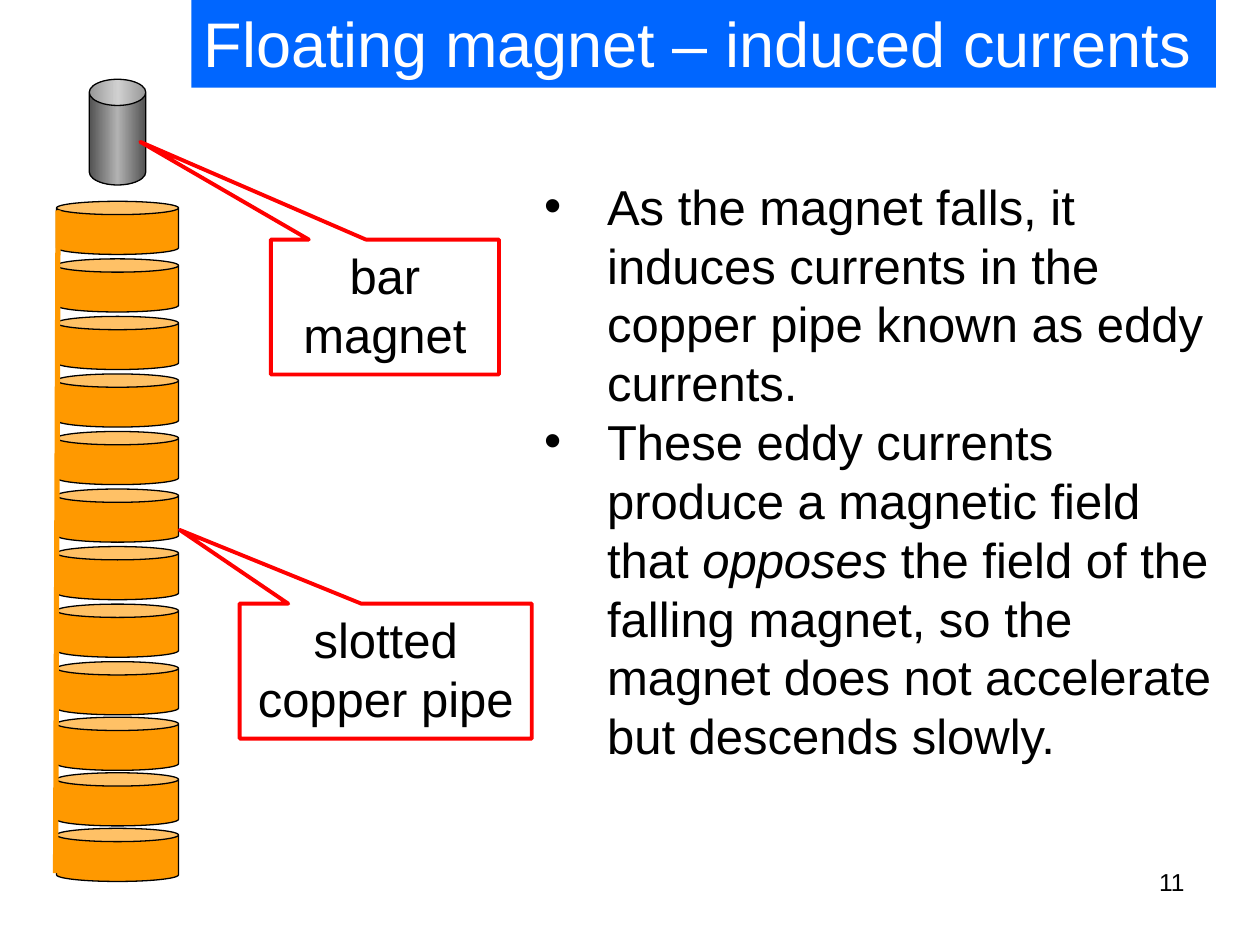
from dataclasses import dataclass

from lxml.etree import SubElement
from pptx import Presentation
from pptx.dml.color import RGBColor
from pptx.enum.shapes import MSO_CONNECTOR, MSO_SHAPE
from pptx.enum.text import MSO_ANCHOR, PP_ALIGN
from pptx.oxml.ns import qn
from pptx.util import Cm, Pt

BLACK, WHITE, RED = "000000", "FFFFFF", "FF0000"
COPPER, BLUE = "FF9900", "0066FF"
STEEL_STOPS = ((0, "525252"), (50, "B2B2B2"), (100, "525252"))
FRAME_FORMAT = {"word_wrap": True, "vertical_anchor": MSO_ANCHOR.TOP}

RING_COUNT = 12
WIDE_STEPS = 8  # the lowest rings stand slightly closer together
WIDE_PITCH, NARROW_PITCH = 1.16, 1.12


@dataclass(frozen=True)
class Box:
    """Left, top, width and height in centimetres."""
    left: float
    top: float
    width: float
    height: float

    def lengths(self) -> tuple:
        return Cm(self.left), Cm(self.top), Cm(self.width), Cm(self.height)


@dataclass(frozen=True)
class Callout:
    box: Box
    tip: tuple[float, float]
    lines: tuple[str, ...]


CALLOUTS = (
    Callout(Box(4.83, 12.17, 5.89, 2.72), (-0.705, -1.047), ("slotted copper pipe",)),
    Callout(Box(5.46, 4.83, 4.6, 2.72), (-1.072, -1.224), ("bar", "magnet")),
)
# Each point is a list of (text, italic) pieces.
POINTS = (
    (("As the magnet falls, it induces currents in the copper pipe "
      "known as eddy currents.", False),),
    (("These eddy currents produce a magnetic field that ", False),
     ("opposes", True),
     (" the field of the falling magnet, so the magnet does not "
      "accelerate but descends slowly.", False)),
)


def colour(code: str) -> RGBColor:
    return RGBColor.from_string(code)


def add_solid(slide, kind, box: Box, fill=None, line=None, weight=0.75, adjust=()):
    solid = slide.shapes.add_shape(kind, *box.lengths())
    solid.shadow.inherit = False
    if fill:
        solid.fill.solid()
        solid.fill.fore_color.rgb = colour(fill)
    else:
        solid.fill.background()
    if line:
        solid.line.color.rgb = colour(line)
        solid.line.width = Pt(weight)
    else:
        solid.line.fill.background()
    for index, value in enumerate(adjust):
        solid.adjustments[index] = value
    return solid


def write(holder, paragraphs, size: float, text_colour=BLACK, align=PP_ALIGN.LEFT) -> None:
    """Fill a text frame with paragraphs made of (text, italic) pieces."""
    frame = holder.text_frame
    for name, value in FRAME_FORMAT.items():
        setattr(frame, name, value)
    for index, pieces in enumerate(paragraphs):
        paragraph = frame.paragraphs[0] if index == 0 else frame.add_paragraph()
        paragraph.alignment = align
        for text, italic in pieces:
            run = paragraph.add_run()
            run.text = text
            font_format = {"name": "Arial", "size": Pt(size), "italic": italic}
            for name, value in font_format.items():
                setattr(run.font, name, value)
            run.font.color.rgb = colour(text_colour)


def shade_steel(magnet) -> None:
    """Give the magnet a three-stop gradient from left to right."""
    magnet.fill.gradient()
    magnet.fill.gradient_angle = 0
    stops = magnet.element.spPr.find(qn("a:gradFill")).find(qn("a:gsLst"))
    for stop in list(stops):
        stops.remove(stop)
    for percent, code in STEEL_STOPS:
        stop = SubElement(stops, qn("a:gs"), pos=str(percent * 1000))
        SubElement(stop, qn("a:srgbClr"), val=code)


def add_bullets(holder) -> None:
    indent = Cm(1.27)
    for paragraph in holder.text_frame.paragraphs:
        properties = paragraph._p.get_or_add_pPr()
        properties.set("marL", str(indent))
        properties.set("indent", str(-indent))
        SubElement(properties, qn("a:buFont"), typeface="Arial")
        SubElement(properties, qn("a:buChar"), char="•")


def draw_pipe(slide) -> None:
    for ring in range(RING_COUNT):
        wide = min(ring, WIDE_STEPS)
        top = 4.06 + wide * WIDE_PITCH + (ring - wide) * NARROW_PITCH
        add_solid(slide, MSO_SHAPE.CAN, Box(1.14, top, 2.46, 1.07),
                  COPPER, BLACK, adjust=(0.25,))


def draw_pipe_edge(slide) -> None:
    edge = slide.shapes.add_connector(
        MSO_CONNECTOR.STRAIGHT, Cm(1.17), Cm(4.24), Cm(1.12), Cm(17.6))
    edge.line.color.rgb = colour(COPPER)
    edge.line.width = Pt(3)
    SubElement(edge.element.spPr, qn("a:effectLst"))


def draw_callout(slide, callout: Callout) -> None:
    label = add_solid(slide, MSO_SHAPE.RECTANGULAR_CALLOUT, callout.box,
                      line=RED, weight=2.25, adjust=callout.tip)
    write(label, [((line, False),) for line in callout.lines], 28,
          align=PP_ALIGN.CENTER)


def main() -> None:
    deck = Presentation()
    deck.slide_width, deck.slide_height = Cm(25.4), Cm(19.05)
    slide = deck.slides.add_slide(deck.slide_layouts[6])

    magnet = add_solid(slide, MSO_SHAPE.CAN, Box(1.8, 1.6, 1.14, 2.13),
                       line=BLACK, adjust=(0.463,))
    shade_steel(magnet)
    draw_pipe(slide)
    for callout in CALLOUTS:
        draw_callout(slide, callout)

    title = add_solid(slide, MSO_SHAPE.RECTANGLE, Box(3.86, -0.03, 20.65, 1.8), BLUE)
    write(title, [(("Floating magnet – induced currents", False),)], 36, WHITE)

    explanation = slide.shapes.add_textbox(*Box(10.72, 3.43, 14.33, 12.22).lengths())
    write(explanation, POINTS, 28)
    add_bullets(explanation)

    draw_pipe_edge(slide)
    page_number = slide.shapes.add_textbox(*Box(18.21, 17.35, 5.92, 1.32).lengths())
    write(page_number, [(("11", False),)], 14, align=PP_ALIGN.RIGHT)

    deck.save("out.pptx")


if __name__ == "__main__":
    main()
